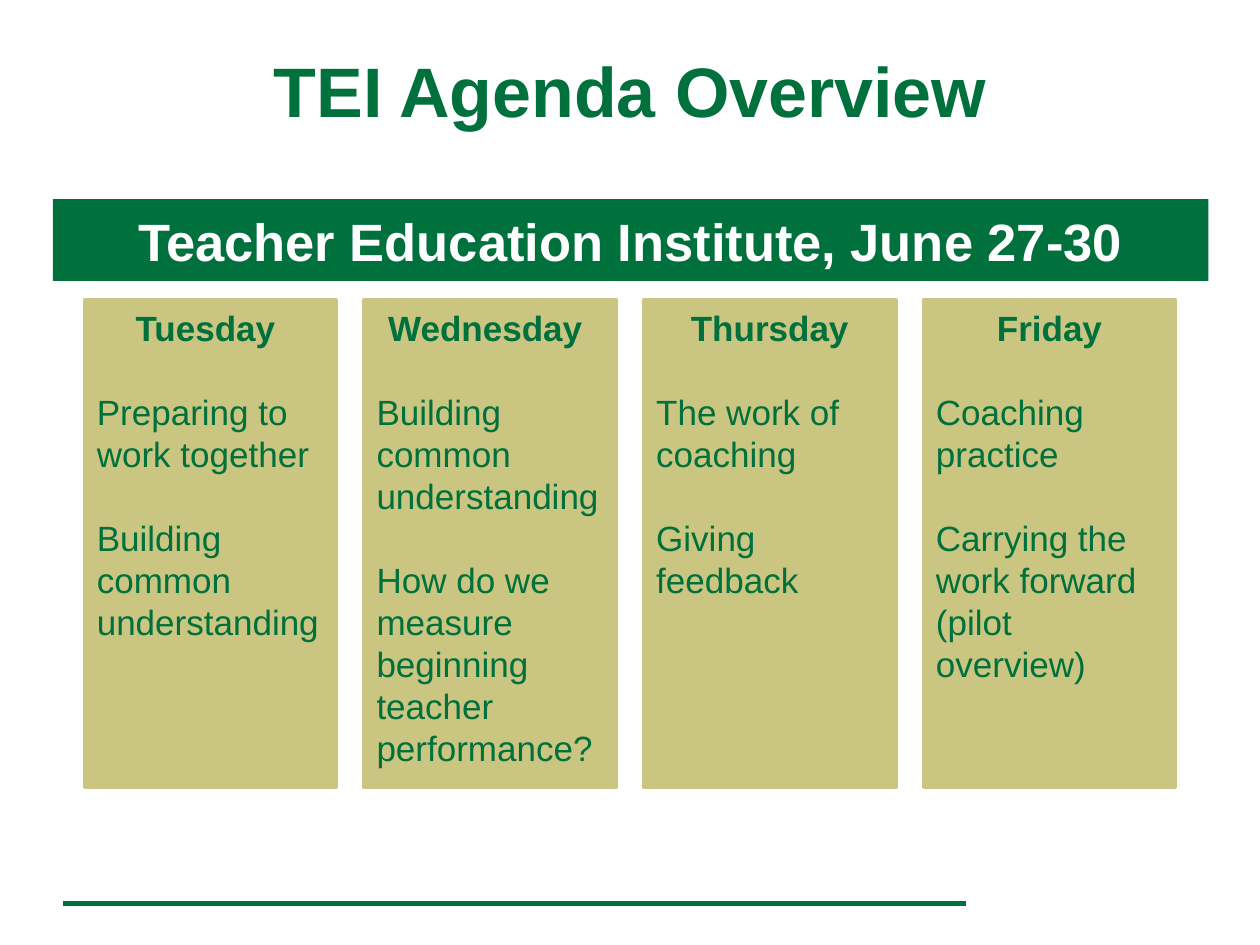
from lxml import etree
from pptx import Presentation
from pptx.dml.color import RGBColor
from pptx.enum import shapes, text
from pptx.util import Emu, Pt

PX = 9144
GREEN = RGBColor(0x00, 0x70, 0x3C)
SAND = RGBColor(0xCA, 0xC5, 0x80)
WHITE = RGBColor(0xFF, 0xFF, 0xFF)
LEFT, MID = text.PP_ALIGN.LEFT, text.PP_ALIGN.CENTER
TOP, MIDDLE = text.MSO_ANCHOR.TOP, text.MSO_ANCHOR.MIDDLE
NS = "{http://schemas.openxmlformats.org/drawingml/2006/main}"
DAYS = [
    ("Tuesday ", ["Preparing to work together", "Building common understanding"]),
    ("Wednesday ", ["Building common understanding",
                    "How do we measure beginning teacher performance?"]),
    ("Thursday", ["The work of coaching", "Giving feedback"]),
    ("Friday", ["Coaching practice", "Carrying the work forward (pilot overview)"]),
]


def px(*nums):
    """Turn px lengths into EMU."""
    return [Emu(n * PX) for n in nums]


def write(para, words, size, color, bold=True, align=MID):
    """Add one run to a paragraph and format both."""
    para.alignment = align
    para.line_spacing = Pt(size * 1.2)
    run = para.add_run()
    run.text = words
    font = run.font
    font.name, font.size, font.bold = "Arial", Pt(size), bold
    font.color.rgb = color


def panel(slide, box, fill, anchor):
    """Draw a filled rectangle and return it."""
    rect = slide.shapes.add_shape(shapes.MSO_SHAPE.RECTANGLE, *px(*box))
    rect.shadow.inherit = False
    rect.fill.solid()
    rect.fill.fore_color.rgb = fill
    rect.line.fill.background()
    rect.text_frame.word_wrap = True
    rect.text_frame.vertical_anchor = anchor
    return rect


def rule(slide, x, y, width):
    """Draw the footer line."""
    line = slide.shapes.add_connector(
        shapes.MSO_CONNECTOR.STRAIGHT, *px(x, y, x + width, y))
    line.line.color.rgb = GREEN
    line.line.width = Pt(2.5)
    etree.SubElement(line._element.spPr, NS + "effectLst")


def head(slide, box, words):
    """Place and fill the title."""
    title = slide.shapes.title
    title.left, title.top, title.width, title.height = px(*box)
    frame = title.text_frame
    frame.auto_size = text.MSO_AUTO_SIZE.NONE
    frame.vertical_anchor = TOP
    frame.margin_top = px(8)[0]
    write(frame.paragraphs[0], words, 40, GREEN)


def banner(slide, box, words):
    """Draw the event banner."""
    rect = panel(slide, box, GREEN, MIDDLE)
    write(rect.text_frame.paragraphs[0], words, 30, WHITE)


def column(slide, box, day, items):
    """Draw one day with its topics."""
    rect = panel(slide, box, SAND, TOP)
    rect.line.color.rgb = SAND
    rect.line.width = Pt(2)
    frame = rect.text_frame
    write(frame.paragraphs[0], day, 20, GREEN)
    for item in items:
        para = frame.add_paragraph()
        para.space_before = Pt(24)
        write(para, item, 20, GREEN, False, LEFT)


def agenda(slide, box, days, gap):
    """Lay out the days in equal columns."""
    x, y, width, height = box
    wide = (width + gap) // len(days) - gap
    for i, (day, items) in enumerate(days):
        column(slide, (x + i * (wide + gap), y, wide, height), day, items)


def main():
    """Build and save the slide."""
    deck = Presentation()
    deck.slide_width, deck.slide_height = px(1000, 750)
    slide = deck.slides.add_slide(deck.slide_layouts[5])
    rule(slide, 50, 717, 717)
    head(slide, (0, 30, 1000, 125), "TEI Agenda Overview")
    agenda(slide, (67, 238, 866, 387), DAYS, 22)
    banner(slide, (42, 158, 917, 65), "Teacher Education Institute, June 27-30")
    deck.save("out.pptx")


if __name__ == "__main__":
    main()
